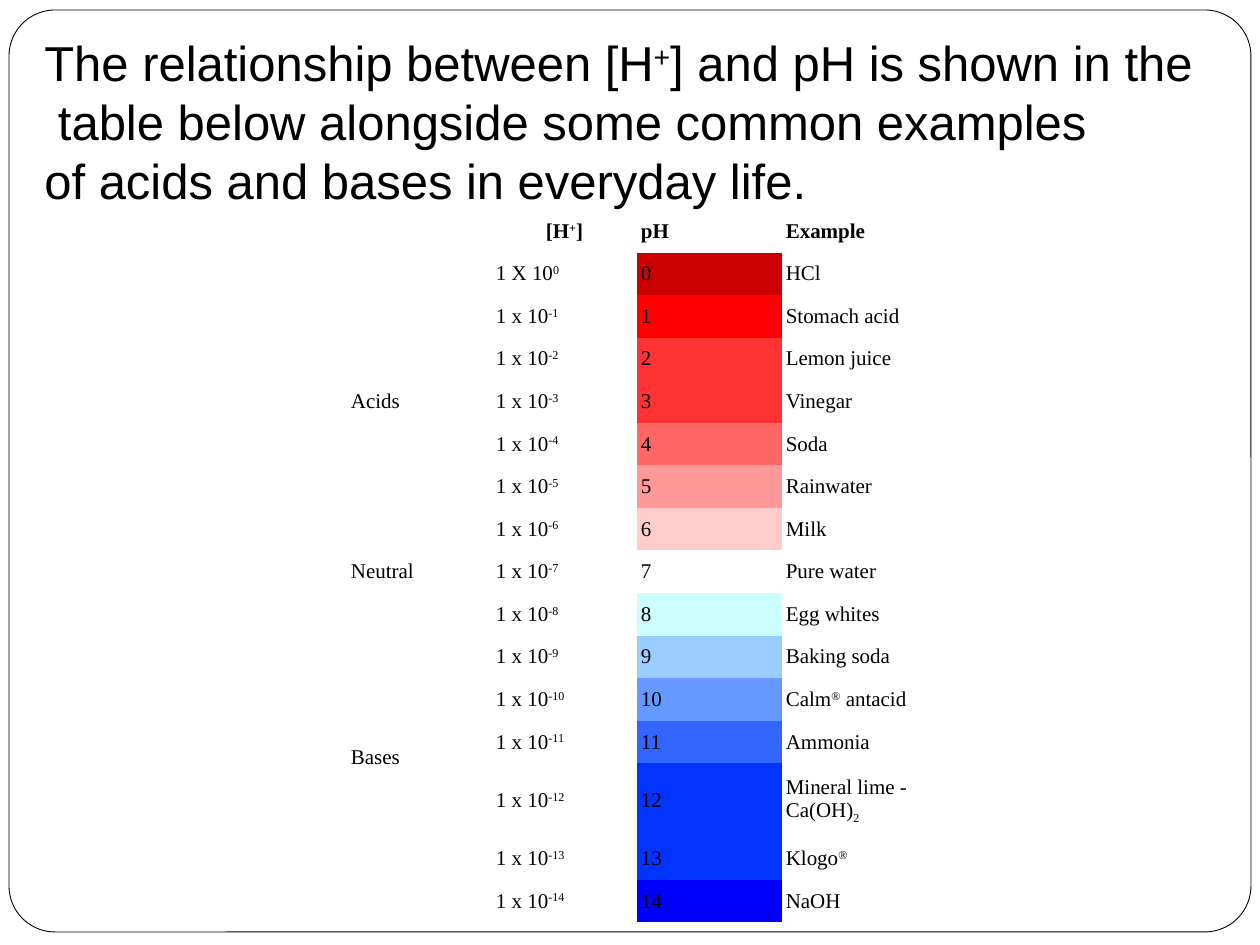
from pptx import Presentation
from pptx.dml.color import RGBColor
from pptx.enum.shapes import MSO_SHAPE as Shape
from pptx.enum.text import MSO_ANCHOR as Anchor, PP_ALIGN as Align
from pptx.util import Pt

PX = 914400 // 126
BLACK = RGBColor(0, 0, 0)
WHITE = RGBColor(255, 255, 255)
SHIFTS = {"^": "30000", "_": "-25000"}
NO_GRID = "{2D5ABB26-0587-4C30-8999-92F81FD0307C}"


def px(length):
    return int(length * PX)


def write(paragraph, text, size, face, bold=False):
    for piece in text.split("|"):
        run = paragraph.add_run()
        run.text = piece.lstrip("^_")
        style = {"size": Pt(size), "name": face, "bold": bold}
        for key, value in style.items():
            setattr(run.font, key, value)
        run.font.color.rgb = BLACK
        if piece[:1] in SHIFTS:
            run.font._element.set("baseline", SHIFTS[piece[0]])


deck = Presentation()
deck.slide_width, deck.slide_height = px(1260), px(945)
slide = deck.slides.add_slide(deck.slide_layouts[6])

frame = slide.shapes.add_shape(Shape.ROUNDED_RECTANGLE, px(9), px(10), px(1242), px(922))
frame.adjustments[0] = 0.05
frame.shadow.inherit = False
frame.fill.solid()
frame.fill.fore_color.rgb = WHITE
frame.line.color.rgb = BLACK
frame.line.width = Pt(0.5)

SCALE = [
    ("HCl", "CC0000"),
    ("Stomach acid", "FF0000"),
    ("Lemon juice", "FF3333"),
    ("Vinegar", "FF3333"),
    ("Soda", "FF6666"),
    ("Rainwater", "FF9999"),
    ("Milk", "FFCCCC"),
    ("Pure water", None),
    ("Egg whites", "CCFFFF"),
    ("Baking soda", "99CCFF"),
    ("Calm|^®| antacid", "6699FF"),
    ("Ammonia", "3366FF"),
    ("Mineral lime - Ca(OH)|_2", "0033FF"),
    ("Klogo|^®", "0033FF"),
    ("NaOH", "0000FF"),
]
GROUPS = {0: "Acids", 7: "Neutral", 8: "Bases"}
TABLE_HEIGHT, TALL_ROW, TALL_PH = 713, 74, 12

rows = [("", "[H|^+|]", "pH", "Example")]
for ph, (example, colour) in enumerate(SCALE):
    concentration = f"1 x 10|^-{ph}" if ph else "1 X 10|^0"
    rows.append((GROUPS.get(ph, ""), concentration, str(ph), example))

ph_table = slide.shapes.add_table(
    len(rows), 4, px(347), px(210), px(580), px(TABLE_HEIGHT)
).table
ph_table.first_row = ph_table.horz_banding = False
ph_table._tbl.tblPr.find("{*}tableStyleId").text = NO_GRID
for column in ph_table.columns:
    column.width = px(145)
for row in ph_table.rows:
    row.height = px((TABLE_HEIGHT - TALL_ROW) / (len(rows) - 1))
ph_table.rows[TALL_PH + 1].height = px(TALL_ROW)

CELL_FORMAT = {"vertical_anchor": Anchor.MIDDLE}
CELL_FORMAT.update((f"margin_{side}", px(4)) for side in ("left", "top", "right", "bottom"))
for r, texts in enumerate(rows):
    for c, text in enumerate(texts):
        cell = ph_table.cell(r, c)
        for key, value in CELL_FORMAT.items():
            setattr(cell, key, value)
        colour = SCALE[r - 1][1] if r and c == 2 else None
        if colour:
            cell.fill.solid()
            cell.fill.fore_color.rgb = RGBColor.from_string(colour)
        else:
            cell.fill.background()
        paragraph = cell.text_frame.paragraphs[0]
        if text:
            write(paragraph, text, 12, "Times New Roman", bold=r == 0)
        else:
            paragraph._p.get_or_add_endParaRPr().set("sz", "1200")
ph_table.cell(0, 1).text_frame.paragraphs[0].alignment = Align.CENTER
for first, last in ((1, 7), (9, 15)):
    ph_table.cell(first, 0).merge(ph_table.cell(last, 0))

INTRO = [
    "The relationship between [H|^+|] and pH is shown in the",
    " table below alongside some common examples",
    "of acids and bases in everyday life.",
]
intro = slide.shapes.add_textbox(px(32), px(21), px(1191), px(229)).text_frame
intro.word_wrap = False
intro.vertical_anchor = Anchor.TOP
intro.margin_top = px(12)
for i, line in enumerate(INTRO):
    paragraph = intro.add_paragraph() if i else intro.paragraphs[0]
    write(paragraph, line, 28, "Arial")

deck.save("out.pptx")
